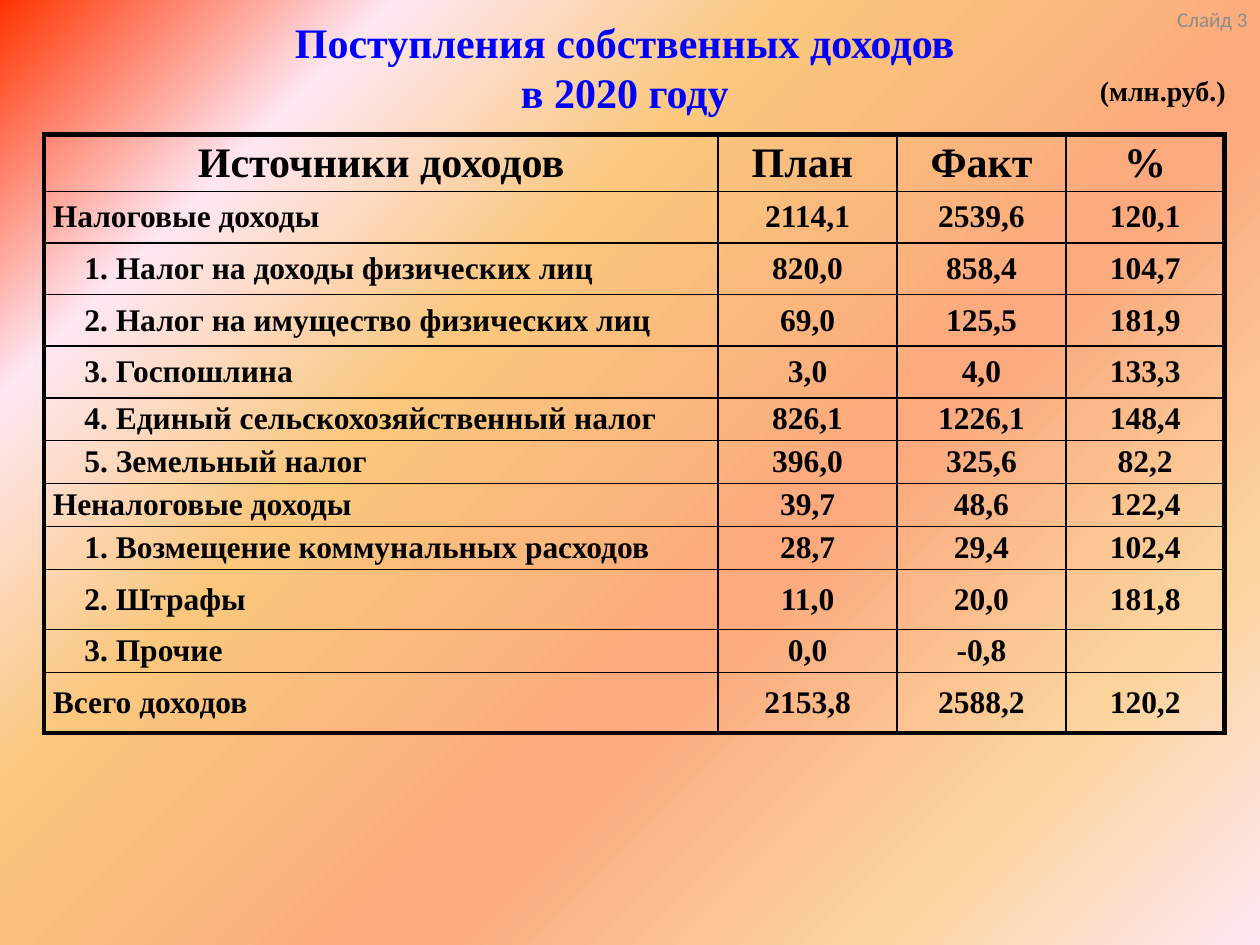
from lxml import etree
from pptx import Presentation
from pptx.dml.color import RGBColor
from pptx.enum.text import MSO_ANCHOR, PP_ALIGN
from pptx.oxml import parse_xml
from pptx.oxml.ns import nsdecls, qn
from pptx.util import Pt

CENTER, RIGHT, JUSTIFY = PP_ALIGN.CENTER, PP_ALIGN.RIGHT, PP_ALIGN.JUSTIFY
TOP, MIDDLE = MSO_ANCHOR.TOP, MSO_ANCHOR.MIDDLE

BLACK = RGBColor(0x00, 0x00, 0x00)
BLUE = RGBColor(0x00, 0x00, 0xFF)
GRAY = RGBColor(0x8C, 0x8C, 0x8C)
GRADIENT = [
    (0, RGBColor(0xFF, 0x33, 0x00)),
    (18, RGBColor(0xFE, 0xE7, 0xF2)),
    (36, RGBColor(0xFA, 0xC7, 0x7D)),
    (61, RGBColor(0xFB, 0xA9, 0x7D)),
    (82, RGBColor(0xFB, 0xD4, 0x9C)),
    (100, RGBColor(0xFE, 0xE7, 0xF2)),
]
SERIF, SANS = "Times New Roman", "Calibri"

HEADER = ("Источники доходов", "План ", "Факт", "%")
INCOME = [
    ("Налоговые доходы", "2114,1", "2539,6", "120,1"),
    ("1. Налог на доходы физических лиц", "820,0", "858,4", "104,7"),
    ("2. Налог на имущество физических лиц", "69,0", "125,5", "181,9"),
    ("3. Госпошлина", "3,0", "4,0", "133,3"),
    ("4. Единый сельскохозяйственный налог", "826,1", "1226,1", "148,4"),
    ("5. Земельный налог", "396,0", "325,6", "82,2"),
    ("Неналоговые доходы", "39,7", "48,6", "122,4"),
    ("1. Возмещение коммунальных расходов", "28,7", "29,4", "102,4"),
    ("2. Штрафы", "11,0", "20,0", "181,8"),
    ("3. Прочие", "0,0", "-0,8", ""),
    ("Всего доходов", "2153,8", "2588,2", "120,2"),
]
COL_WIDTHS = (385.2, 102.2, 96.5, 90.7)
ROW_HEIGHTS = (32.4, *[29.5] * 4, *[24.5] * 4, 34.6, 24.5, 34.6)
OUTER, INNER, THIN = 3, 1, 0.5
THIN_BELOW = (5, 8)
CELL_INSET, ITEM_INDENT = 5, 18


def paint_background(s):
    s.background.fill.gradient()
    s.background.fill.gradient_angle = 315
    stops = s.element.find(f".//{qn('a:gsLst')}")
    for old in list(stops):
        stops.remove(old)
    for percent, color in GRADIENT:
        gs = etree.SubElement(stops, qn("a:gs"), pos=str(percent * 1000))
        etree.SubElement(gs, qn("a:srgbClr"), val=str(color))


def style_text(tf, size, color, align, font=SERIF, bold=True):
    for p in tf.paragraphs:
        p.alignment = align
        for r in p.runs:
            r.font.name = font
            r.font.size = Pt(size)
            r.font.bold = bold
            r.font.color.rgb = color


def add_text(s, box, text, size, color, align, anchor=MIDDLE, **style):
    tf = s.shapes.add_textbox(*(Pt(v) for v in box)).text_frame
    tf.word_wrap = True
    tf.vertical_anchor = anchor
    tf.text = text
    style_text(tf, size, color, align, **style)


def rule_width(index, count):
    """Width of the horizontal rule above row `index`."""
    if index in (0, count):
        return OUTER
    return THIN if index - 1 in THIN_BELOW else INNER


def set_borders(cell, widths):
    tcPr = cell._tc.get_or_add_tcPr()
    for i, (side, width) in enumerate(zip("LRTB", widths)):
        tcPr.insert(i, parse_xml(
            f'<a:ln{side} {nsdecls("a")} w="{Pt(width)}"><a:solidFill>'
            f'<a:srgbClr val="{BLACK}"/></a:solidFill></a:ln{side}>'))


def add_income_table(s, left, top):
    rows = [HEADER, *INCOME]
    n_rows, n_cols = len(rows), len(HEADER)
    table = s.shapes.add_table(
        n_rows, n_cols, Pt(left), Pt(top),
        Pt(sum(COL_WIDTHS)), Pt(sum(ROW_HEIGHTS))).table
    table.first_row = table.horz_banding = False
    for column, width in zip(table.columns, COL_WIDTHS):
        column.width = Pt(width)
    for i, (values, height) in enumerate(zip(rows, ROW_HEIGHTS)):
        table.rows[i].height = Pt(height)
        for j, value in enumerate(values):
            cell = table.cell(i, j)
            indent = ITEM_INDENT if value[:1].isdigit() and j == 0 else 0
            cell.margin_left = Pt(CELL_INSET + indent)
            cell.margin_right = Pt(CELL_INSET)
            cell.margin_top = cell.margin_bottom = 0
            cell.vertical_anchor = MIDDLE
            cell.fill.background()
            cell.text_frame.text = value
            style_text(cell.text_frame, 18 if i else 24, BLACK,
                       JUSTIFY if i and j == 0 else CENTER)
            set_borders(cell, (OUTER if j == 0 else INNER,
                               OUTER if j == n_cols - 1 else INNER,
                               rule_width(i, n_rows),
                               rule_width(i + 1, n_rows)))


def main():
    prs = Presentation()
    prs.slide_width, prs.slide_height = Pt(720), Pt(540)
    s = prs.slides.add_slide(prs.slide_layouts[6])
    paint_background(s)
    add_text(s, (20, 9.5, 680, 57), "Поступления собственных доходов \vв 2020 году ",
             24, BLUE, CENTER)
    add_text(s, (620.5, 37.5, 88, 28), "(млн.руб.)", 16, BLACK, CENTER)
    add_text(s, (660, 0, 60, 37.5), "Слайд 3", 12, GRAY, RIGHT,
             anchor=TOP, font=SANS, bold=False)
    add_income_table(s, 25.2, 77)
    prs.save("out.pptx")


if __name__ == "__main__":
    main()
